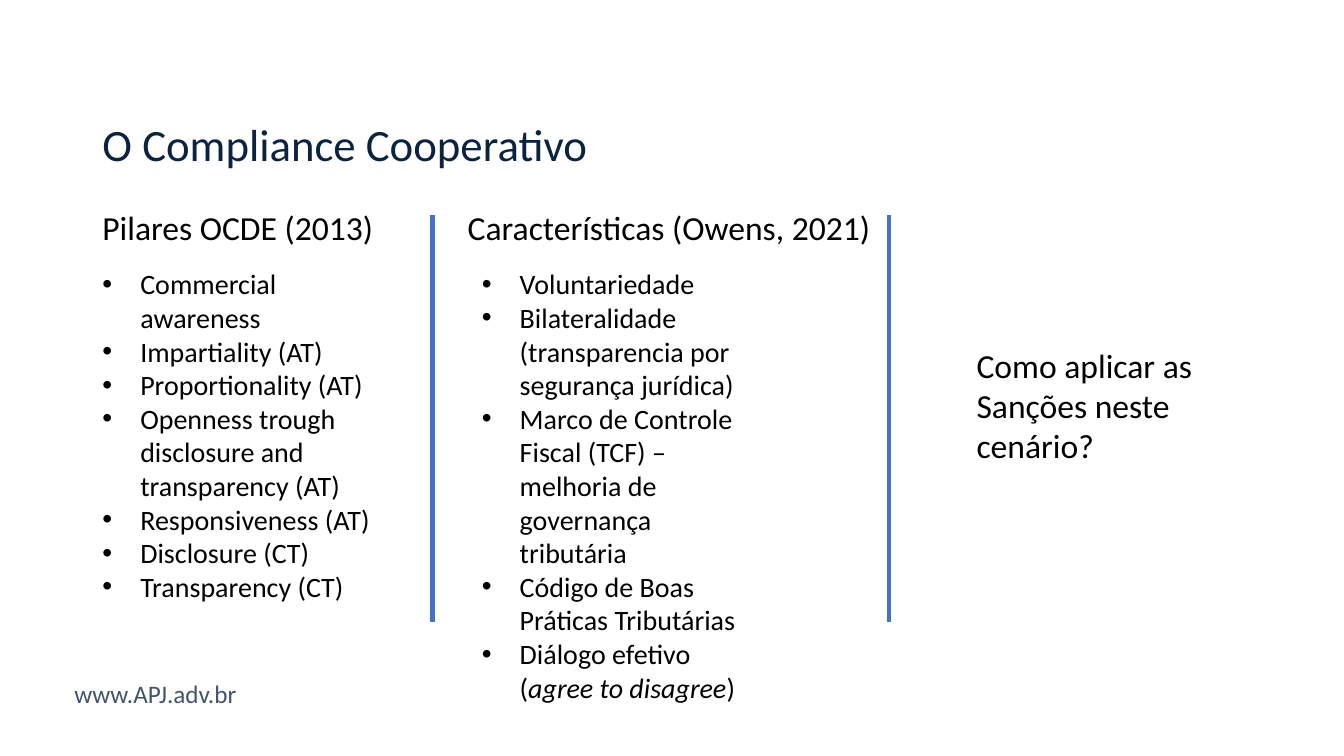
import pptx
import pptx.dml.color
import pptx.enum.shapes
import pptx.enum.text
import pptx.oxml.ns
import pptx.util
from lxml import etree

Pt = pptx.util.Pt
RGBColor = pptx.dml.color.RGBColor
TextEnum = pptx.enum.text

NAVY = RGBColor(0x0B, 0x23, 0x3F)
BLACK = RGBColor(0x00, 0x00, 0x00)
SLATE = RGBColor(0x44, 0x54, 0x6A)
BLUE = RGBColor(0x44, 0x72, 0xC4)

TITLE = {"size": Pt(32), "name": "Calibri"}
HEADING = {"size": Pt(24), "name": "Calibri"}
BULLET = {"size": Pt(20), "name": "Calibri", "italic": False}
FOOTER = {"size": Pt(18), "name": "Calibri"}
FLUSH = {"space_before": Pt(0), "space_after": Pt(0), "line_spacing": 1.0,
         "alignment": TextEnum.PP_ALIGN.LEFT}
HANGING_INDENT = Pt(27)

OECD_PILLARS = [
    ["Commercial awareness"],
    ["Impartiality (AT)"],
    ["Proportionality (AT)"],
    ["Openness trough disclosure and transparency (AT)"],
    ["Responsiveness (AT)"],
    ["Disclosure (CT)"],
    ["Transparency (CT)"],
]
# The second part of an item is in italics.
FEATURES = [
    ["Voluntariedade"],
    ["Bilateralidade (transparencia por segurança jurídica)"],
    ["Marco de Controle Fiscal (TCF) – melhoria de governança tributária"],
    ["Código de Boas Práticas Tributárias"],
    ["Diálogo efetivo (", "agree to disagree", ")"],
]


def apply(target, values):
    """Set every attribute named in values on target."""
    for key, value in values.items():
        setattr(target, key, value)


class SlideBuilder:
    def __init__(self, slide):
        self.slide = slide

    def place(self, shape, left, top, width, height):
        apply(shape, {"left": Pt(left), "top": Pt(top),
                      "width": Pt(width), "height": Pt(height)})

    def add_styled_run(self, paragraph, text, style, color, **changes):
        run = paragraph.add_run()
        run.text = text
        apply(run.font, {**style, **changes})
        run.font.color.rgb = color

    def title(self, text, *bounds):
        heading = self.slide.shapes.title
        self.place(heading, *bounds)
        apply(heading.text_frame, {
            "vertical_anchor": TextEnum.MSO_ANCHOR.MIDDLE,
            "auto_size": TextEnum.MSO_AUTO_SIZE.NONE, "word_wrap": True})
        paragraph = heading.text_frame.paragraphs[0]
        apply(paragraph, {**FLUSH, "line_spacing": 0.9})
        self.add_styled_run(paragraph, text, TITLE, NAVY)

    def text(self, text, *bounds, style=HEADING, color=BLACK, wrap=False):
        box = self.slide.shapes.add_textbox(0, 0, 0, 0)
        self.place(box, *bounds)
        apply(box.text_frame, {
            "word_wrap": wrap,
            "auto_size": TextEnum.MSO_AUTO_SIZE.SHAPE_TO_FIT_TEXT})
        self.add_styled_run(box.text_frame.paragraphs[0], text, style, color)

    def bullets(self, index, items, *bounds):
        body = self.slide.placeholders[index]
        self.place(body, *bounds)
        frame = body.text_frame
        apply(frame, {"word_wrap": True,
                      "auto_size": TextEnum.MSO_AUTO_SIZE.NONE,
                      "vertical_anchor": TextEnum.MSO_ANCHOR.TOP})
        for number, parts in enumerate(items):
            paragraph = frame.add_paragraph() if number else frame.paragraphs[0]
            apply(paragraph, FLUSH)
            self.add_bullet(paragraph)
            for position, part in enumerate(parts):
                self.add_styled_run(paragraph, part, BULLET, BLACK,
                                    italic=position == 1)

    def add_bullet(self, paragraph):
        properties = paragraph._p.get_or_add_pPr()
        properties.set("marL", str(HANGING_INDENT))
        properties.set("indent", str(-HANGING_INDENT))
        qn = pptx.oxml.ns.qn
        etree.SubElement(properties, qn("a:buFont")).set("typeface", "Arial")
        etree.SubElement(properties, qn("a:buChar")).set("char", "•")

    def divider(self, x, top, bottom):
        line = self.slide.shapes.add_connector(
            pptx.enum.shapes.MSO_CONNECTOR.STRAIGHT,
            Pt(x), Pt(top), Pt(x), Pt(bottom))
        line.line.color.rgb = BLUE
        line.line.width = Pt(3)
        etree.SubElement(line._element.spPr, pptx.oxml.ns.qn("a:effectLst"))


def main():
    deck = pptx.Presentation()
    deck.slide_width, deck.slide_height = Pt(960), Pt(540)
    two_content = deck.slide_layouts[3]
    page = SlideBuilder(deck.slides.add_slide(two_content))

    page.title("O Compliance Cooperativo", 66, 65.5, 828, 78.5)
    page.text("Pilares OCDE (2013)", 66, 144, 209.5, 36)
    page.bullets(1, OECD_PILLARS, 66, 187, 214.5, 250)
    page.text("Características (Owens, 2021)", 327, 144, 304.5, 36)
    page.bullets(2, FEATURES, 337, 187, 214.5, 346)
    page.text("Como aplicar as Sanções neste cenário?",
              690.5, 242.5, 175, 94.5, wrap=True)
    for x in (309, 635):
        page.divider(x, 153.5, 444)
    page.text("www.APJ.adv.br", 46, 481, 136, 29, style=FOOTER, color=SLATE)

    deck.save("out.pptx")


if __name__ == "__main__":
    main()
